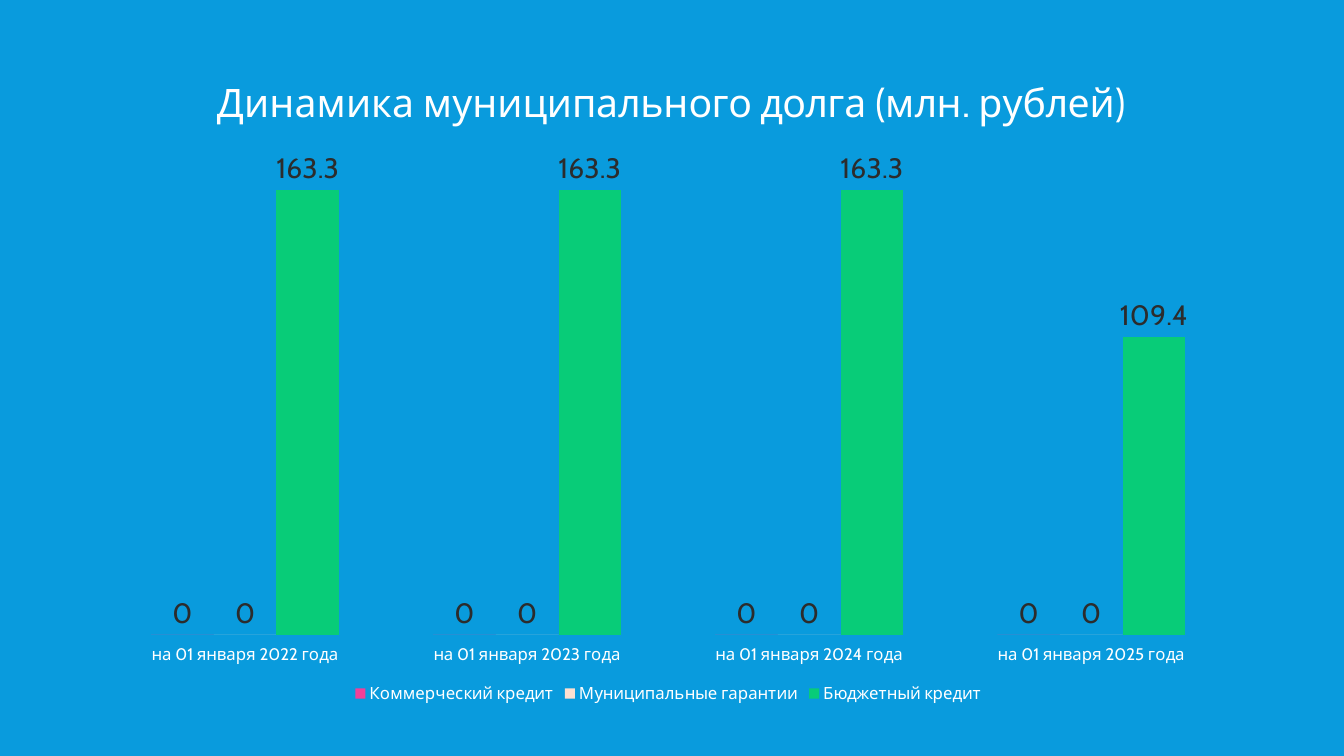
from lxml import etree
from pptx import Presentation
from pptx.chart.data import CategoryChartData
from pptx.dml.color import RGBColor
from pptx.enum.chart import (XL_CHART_TYPE, XL_LABEL_POSITION, XL_LEGEND_POSITION,
                             XL_TICK_LABEL_POSITION, XL_TICK_MARK)
from pptx.oxml.ns import qn
from pptx.util import Pt

COLUMNS = XL_CHART_TYPE.COLUMN_CLUSTERED
LABEL_ABOVE = XL_LABEL_POSITION.OUTSIDE_END
LEGEND_BOTTOM = XL_LEGEND_POSITION.BOTTOM
LABELS_LOW = XL_TICK_LABEL_POSITION.LOW
NO_TICKS = XL_TICK_MARK.NONE

BLUE = RGBColor(0x09, 0x9B, 0xDD)
WHITE = RGBColor(0xFF, 0xFF, 0xFF)
DARK = RGBColor(0x2C, 0x2C, 0x2C)
PINK = RGBColor(0xF2, 0x40, 0x99)
PEACH = RGBColor(0xFD, 0xE0, 0xD1)
GREEN = RGBColor(0x08, 0xCC, 0x78)
FONT = "Cabin"

TITLE = "Динамика муниципального долга (млн. рублей)"
YEARS = range(2022, 2026)
DEBTS = [
    ("Коммерческий кредит", [0, 0, 0, 0], PINK),
    ("Муниципальные гарантии", [0, 0, 0, 0], PEACH),
    ("Бюджетный кредит", [163.3, 163.3, 163.3, 109.4], GREEN),
]


def set_font(font, size, color):
    font.name = FONT
    font.size = Pt(size)
    font.bold = False
    font.color.rgb = color


def place(element, before, **settings):
    """Give a chart part a manual layout, as fractions of the chart."""
    for old_layout in element.findall(qn("c:layout")):
        element.remove(old_layout)
    layout = etree.Element(qn("c:layout"))
    manual = etree.SubElement(layout, qn("c:manualLayout"))
    for name, value in settings.items():
        etree.SubElement(manual, qn(f"c:{name}")).set("val", str(value))
    element.insert(before, layout)


def add_debt_chart(slide):
    data = CategoryChartData()
    data.categories = [f"на 01 января {year} года" for year in YEARS]
    for name, values, _ in DEBTS:
        data.add_series(name, values)
    frame = slide.shapes.add_chart(COLUMNS, Pt(57.6), Pt(29.5), Pt(839.5), Pt(475.9), data)
    chart = frame.chart
    set_font(chart.font, 10, WHITE)
    return chart


def format_title(chart):
    chart.has_title = True
    paragraph = chart.chart_title.text_frame.paragraphs[0]
    paragraph.text = TITLE
    set_font(paragraph.font, 28, WHITE)
    place(chart.chart_title._element, 1, xMode="edge", yMode="edge", x=0.11, y=0.04)
    chart.chart_title.include_in_layout = False


def format_axes(chart):
    dates = chart.category_axis
    dates.major_tick_mark = dates.minor_tick_mark = NO_TICKS
    dates.tick_label_position = LABELS_LOW
    dates.format.line.fill.background()
    set_font(dates.tick_labels.font, 12, WHITE)
    amounts = chart.value_axis
    amounts.minimum_scale, amounts.maximum_scale = 0, 180
    amounts.has_major_gridlines = False
    amounts.visible = False


def format_series(chart):
    plot = chart.plots[0]
    plot.gap_width = 150
    plot.overlap = 0
    plot.vary_by_categories = False
    for series, (_, _, color) in zip(plot.series, DEBTS):
        series.format.fill.solid()
        series.format.fill.fore_color.rgb = color
        labels = series.data_labels
        labels.show_value = True
        labels.position = LABEL_ABOVE
        set_font(labels.font, 20, DARK)


def format_legend(chart):
    chart.has_legend = True
    chart.legend.position = LEGEND_BOTTOM
    chart.legend.include_in_layout = False
    set_font(chart.legend.font, 12, WHITE)


def main():
    presentation = Presentation()
    presentation.slide_width = Pt(960)
    presentation.slide_height = Pt(540)
    slide = presentation.slides.add_slide(presentation.slide_layouts[6])

    # Background
    slide.background.fill.solid()
    slide.background.fill.fore_color.rgb = BLUE

    # Chart with its own title
    chart = add_debt_chart(slide)
    format_title(chart)
    format_axes(chart)
    format_series(chart)
    format_legend(chart)
    plot_area = chart._chartSpace.find(f".//{qn('c:plotArea')}")
    place(plot_area, 0, layoutTarget="inner", xMode="edge", yMode="edge",
          x=0.02, y=0.155, w=0.96, h=0.736)

    presentation.save("out.pptx")


if __name__ == "__main__":
    main()
